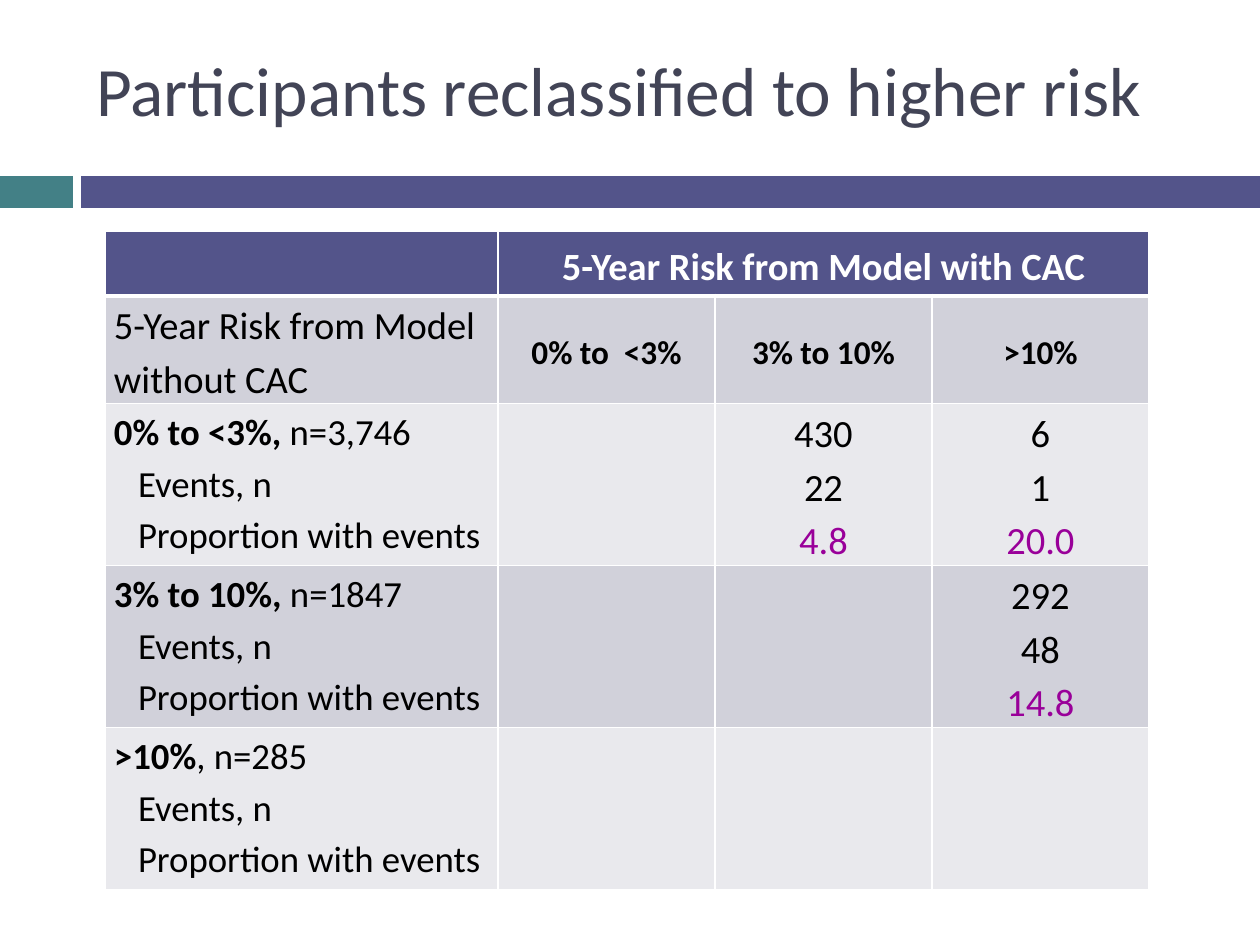
from dataclasses import dataclass
from lxml import etree
from pptx import Presentation, util as u
from pptx.dml.color import RGBColor
from pptx.enum import shapes, text
from pptx.oxml import ns

SCALE = 914400 / 126
MID, TOP = text.MSO_ANCHOR.MIDDLE, text.MSO_ANCHOR.TOP
LEFT, CENTER = text.PP_ALIGN.LEFT, text.PP_ALIGN.CENTER


def emu(px):
    return u.Emu(round(px * SCALE))


@dataclass(frozen=True)
class Theme:
    font: str = "Calibri"
    ink: str = "000000"
    white: str = "FFFFFF"
    title: str = "424456"
    teal: str = "438086"
    purple: str = "53548A"
    dark: str = "D1D1DA"
    light: str = "E9E9ED"
    rate: str = "990099"
    big: float = 39.6
    head: int = 22
    label: int = 21
    small: int = 19


class Deck:
    def __init__(self, theme):
        self.theme = theme
        self.prs = Presentation()
        self.prs.slide_width, self.prs.slide_height = emu(1260), emu(945)
        self.slide = self.prs.slides.add_slide(self.prs.slide_layouts[6])

    def style(self, run, size, color, bold=False):
        font = run.font
        font.name, font.size, font.bold = self.theme.font, u.Pt(size), bold
        font.color.rgb = RGBColor.from_string(color)

    def bar(self, left, top, width, height, color):
        bar = self.slide.shapes.add_shape(
            shapes.MSO_SHAPE.RECTANGLE, *map(emu, (left, top, width, height)))
        bar.shadow.inherit = False
        bar.fill.solid()
        bar.fill.fore_color.rgb = RGBColor.from_string(color)
        bar.line.fill.background()

    def title(self, words, left, top, width, height):
        box = self.slide.shapes.add_textbox(*map(emu, (left, top, width, height)))
        frame = box.text_frame
        frame.word_wrap, frame.vertical_anchor = True, MID
        frame.text = words
        self.style(frame.paragraphs[0].runs[0], self.theme.big, self.theme.title)

    def grid(self, left, top, cols, rows):
        frame = self.slide.shapes.add_table(
            len(rows), len(cols), *map(emu, (left, top, sum(cols), sum(rows))))
        table = frame.table
        table.first_row = table.horz_banding = False
        for col, width in zip(table.columns, cols):
            col.width = emu(width)
        for row, height in zip(table.rows, rows):
            row.height = emu(height)
        return table

    def paint(self, cell, color, below=1):
        """Fill a cell and give it white borders, `below` points wide at the bottom."""
        props = cell._tc.get_or_add_tcPr()
        for side, width in (("L", 1), ("R", 1), ("T", 1), ("B", below)):
            line = etree.SubElement(props, ns.qn("a:ln" + side), w=str(u.Pt(width)))
            fill = etree.SubElement(line, ns.qn("a:solidFill"))
            etree.SubElement(fill, ns.qn("a:srgbClr"), val=self.theme.white)
        cell.fill.solid()
        cell.fill.fore_color.rgb = RGBColor.from_string(color)
        cell.margin_left = cell.margin_right = emu(9)
        cell.margin_top = cell.margin_bottom = 0

    def entry(self, cell, lines, size, align=CENTER, anchor=TOP, before=0):
        """Fill a cell with paragraphs, each a list of (words, color, bold) runs."""
        cell.vertical_anchor = anchor
        frame = cell.text_frame
        frame.text = "\n".join("" for _ in lines)
        for para, runs in zip(frame.paragraphs, lines):
            para.alignment, para.line_spacing = align, 1.15
            para.space_before = u.Pt(before)
            for words, color, bold in runs:
                run = para.add_run()
                run.text = words
                self.style(run, size, color, bold)

    def label(self, cell, band, count):
        ink = self.theme.ink
        lines = [[(band, ink, True), (count, ink, False)]]
        lines += [[(words, ink, False)] for words in ("Events, n", "Proportion with events")]
        self.entry(cell, lines, self.theme.label, LEFT)
        for para in cell.text_frame.paragraphs[1:]:
            para._p.get_or_add_pPr().set("marL", str(emu(24)))

    def stats(self, cell, total, events, rate):
        t = self.theme
        lines = [[(total, t.ink, False)], [(events, t.ink, False)], [(rate, t.rate, False)]]
        self.entry(cell, lines, t.head)


def main():
    t = Theme()
    deck = Deck(t)
    deck.bar(0, 176, 73, 32, t.teal)
    deck.bar(81, 176, 1179, 32, t.purple)

    table = deck.grid(105, 231, [393] + [217] * 3, [65, 95] + [162] * 3)
    fills = (t.purple, t.dark, t.light, t.dark, t.light)
    for row, fill in enumerate(fills):
        for cell in table.rows[row].cells:
            deck.paint(cell, fill, below=1 if row else 3)

    table.cell(0, 1).merge(table.cell(0, 3))
    deck.entry(table.cell(0, 1), [[("5-Year Risk from Model with CAC", t.white, True)]],
               t.head, anchor=MID, before=6)
    deck.entry(table.cell(1, 0), [[("5-Year Risk from Model without CAC", t.ink, False)]],
               t.head, LEFT, MID, 6)
    for col, band in enumerate(("0% to  <3%", "3% to 10%", ">10%"), 1):
        deck.entry(table.cell(1, col), [[(band, t.ink, True)]], t.small, anchor=MID, before=6)

    groups = (
        ("0% to <3%, ", "n=3,746", {2: ("430", "22", "4.8"), 3: ("6", "1", "20.0")}),
        ("3% to 10%, ", "n=1847", {3: ("292", "48", "14.8")}),
        (">10%", ", n=285", {}),
    )
    for row, (band, count, moved) in enumerate(groups, 2):
        deck.label(table.cell(row, 0), band, count)
        for col, values in moved.items():
            deck.stats(table.cell(row, col), *values)

    deck.title("Participants reclassified to higher risk", 84, 21, 1208, 136)
    deck.prs.save("out.pptx")


if __name__ == "__main__":
    main()
